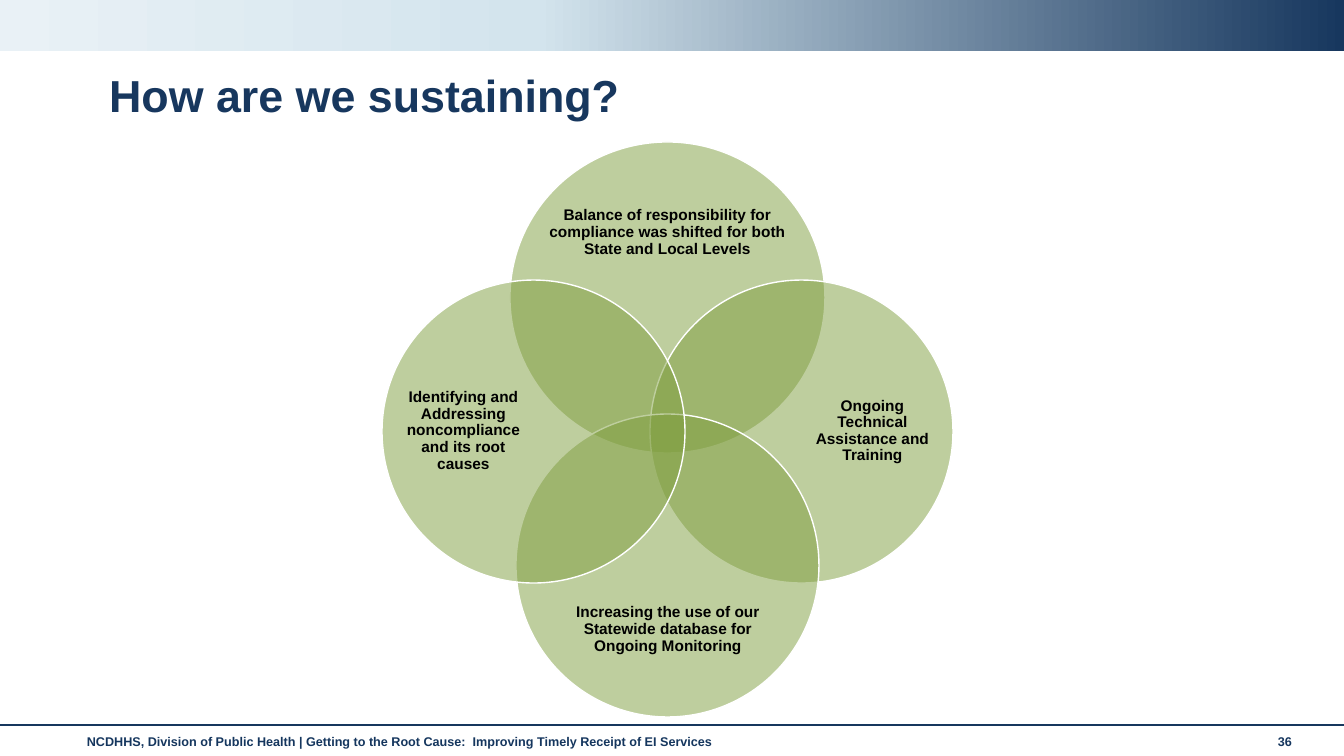
from copy import deepcopy

from lxml.etree import SubElement
from pptx import Presentation
from pptx.dml.color import RGBColor
from pptx.enum.shapes import MSO_CONNECTOR, MSO_SHAPE
from pptx.enum.text import MSO_ANCHOR as ANCHOR, MSO_AUTO_SIZE, PP_ALIGN as ALIGN
from pptx.oxml.ns import qn
from pptx.util import Emu, Pt

WIDTH, HEIGHT = 1344, 756
COLORS = {"navy": "17375E", "footer": "15365E", "sky": "D3E4ED", "mist": "E9F1F6",
          "olive": "7F9E3F", "white": "FFFFFF", "black": "000000"}


def px(*lengths):
    """Turn pixel lengths into EMU."""
    return [Emu(round(length * 12192000 / WIDTH)) for length in lengths]


def write(box, text, size, color, align=ALIGN.LEFT, line_spacing=1.0):
    frame = box.text_frame
    frame.text = text
    frame.word_wrap = True
    frame.auto_size = MSO_AUTO_SIZE.NONE
    frame.vertical_anchor = ANCHOR.MIDDLE
    paragraph = frame.paragraphs[0]
    paragraph.alignment = align
    paragraph.line_spacing = line_spacing
    font = paragraph.font
    font.name, font.size, font.bold = "Arial", Pt(size), True
    font.color.rgb = RGBColor.from_string(COLORS[color])


deck = Presentation()
deck.slide_width, deck.slide_height = px(WIDTH, HEIGHT)
slide = deck.slides.add_slide(deck.slide_layouts[5])
shapes = slide.shapes

# Header band
band = shapes.add_shape(MSO_SHAPE.RECTANGLE, *px(0, 0, WIDTH, 51))
band.shadow.inherit = False
band.line.fill.background()
band.fill.gradient()
band.fill.gradient_angle = 180
stop_list = band._element.spPr.find(".//" + qn("a:gsLst"))
stop_list.append(deepcopy(stop_list[-1]))
band_stops = [(0, "navy"), (0.6, "sky"), (1, "mist")]
for stop, (position, color) in zip(band.fill.gradient_stops, band_stops):
    stop.position = position
    stop.color.rgb = RGBColor.from_string(COLORS[color])

# Footer
rule = shapes.add_connector(MSO_CONNECTOR.STRAIGHT, *px(0, 725, WIDTH, 725))
rule.line.color.rgb = RGBColor.from_string(COLORS["navy"])
rule.line.width = Pt(1.75)
SubElement(rule._element.spPr, qn("a:effectLst"))
footers = [
    ("NCDHHS, Division of Public Health | Getting to the Root Cause:  "
     "Improving Timely Receipt of EI Services", (77, 727, 1175, 29)),
    ("36", (1268, 727, 59, 29)),
]
for text, place in footers:
    write(shapes.add_textbox(*px(*place)), text, 9, "footer")

# Title
title = shapes.title
title.left, title.top, title.width, title.height = px(99, 68, 1153, 60)
write(title, "How are we sustaining?", 32, "navy", line_spacing=0.9)

# Four overlapping circles, each with its label
circles = [
    ("Balance of responsibility for compliance was shifted for both State and Local Levels",
     (510, 142, 315, 311), (546, 183, 243, 99)),
    ("Ongoing Technical Assistance and Training",
     (650, 280, 303, 303), (814, 314, 117, 234)),
    ("Increasing the use of our Statewide database for Ongoing Monitoring",
     (516, 414, 303, 303), (551, 581, 234, 97)),
    ("Identifying and Addressing noncompliance and its root causes",
     (382, 280, 303, 303), (405, 314, 117, 234)),
]
for text, circle_place, label_place in circles:
    circle = shapes.add_shape(MSO_SHAPE.OVAL, *px(*circle_place))
    circle.shadow.inherit = False
    circle.fill.solid()
    circle.fill.fore_color.rgb = RGBColor.from_string(COLORS["olive"])
    fill_color = circle._element.spPr.find(qn("a:solidFill"))[0]
    SubElement(fill_color, qn("a:alpha"), val="50000")
    circle.line.color.rgb = RGBColor.from_string(COLORS["white"])
    circle.line.width = Pt(1)

    label = shapes.add_textbox(*px(*label_place))
    frame = label.text_frame
    frame.margin_left = frame.margin_right = frame.margin_top = frame.margin_bottom = 0
    write(label, text, 11, "black", ALIGN.CENTER, 0.9)

deck.save("out.pptx")
